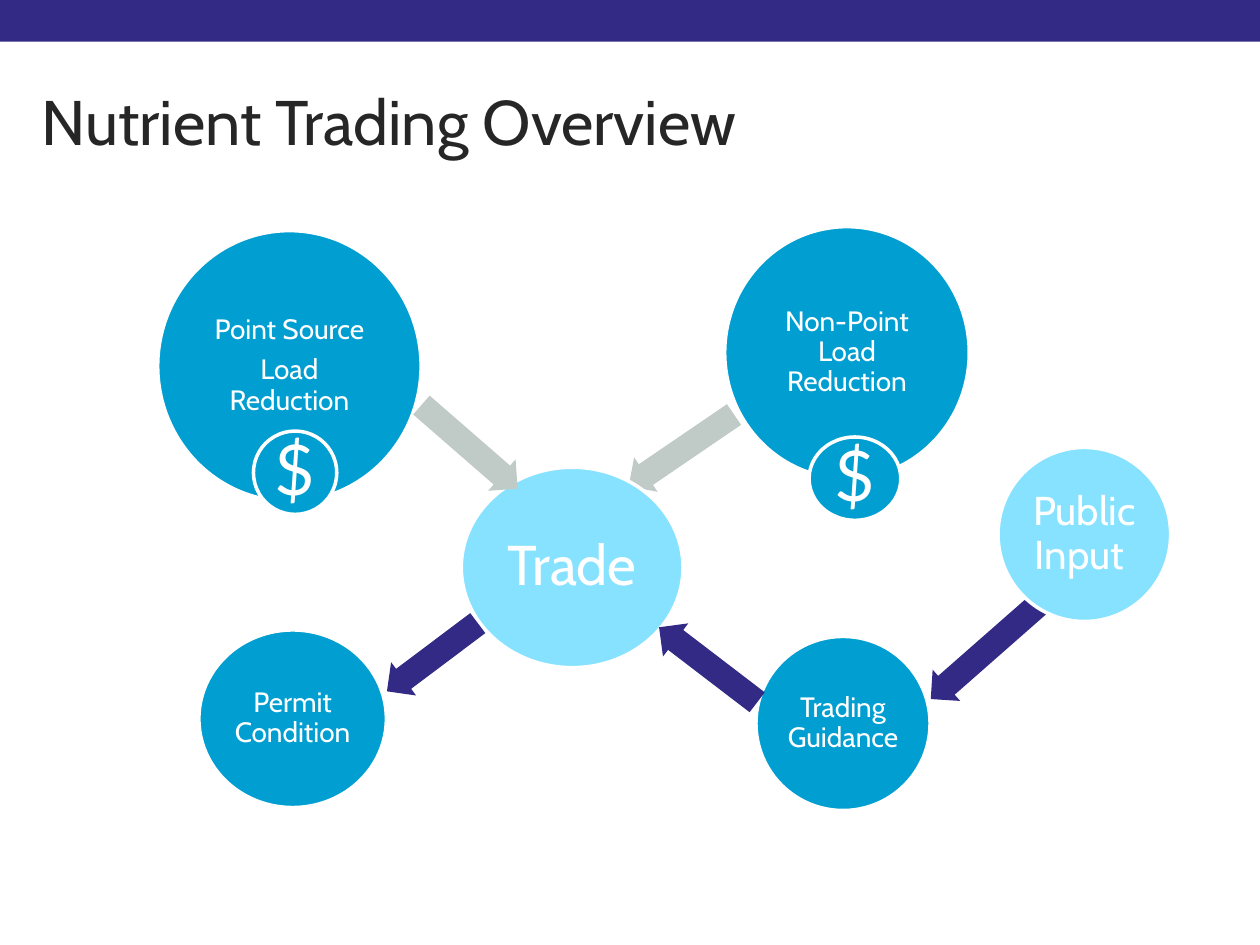
from pptx import Presentation
from pptx.dml.color import RGBColor
from pptx.enum import shapes, text
from pptx.util import Cm, Pt

INDIGO = RGBColor(0x33, 0x2A, 0x86)
BLUE = RGBColor(0x00, 0x9E, 0xD1)
SKY = RGBColor(0x87, 0xE2, 0xFF)
GREY = RGBColor(0xC0, 0xCA, 0xC7)
WHITE = RGBColor(0xFF, 0xFF, 0xFF)
CHARCOAL = RGBColor(0x26, 0x26, 0x26)

WIDTH = 25.4
BAND = 0.84  # height of the top bar and of every arrow


def add_filled(page, kind, left, top, width, height, color):
    shape = page.shapes.add_shape(kind, Cm(left), Cm(top), Cm(width), Cm(height))
    shape.shadow.inherit = False
    shape.fill.solid()
    shape.fill.fore_color.rgb = color
    shape.line.fill.background()
    return shape


def set_insets(frame, left, top, right, bottom):
    frame.margin_left, frame.margin_top = Cm(left), Cm(top)
    frame.margin_right, frame.margin_bottom = Cm(right), Cm(bottom)


def format_text(frame, size, font, color, align, spacing):
    frame.word_wrap = True
    frame.auto_size = text.MSO_AUTO_SIZE.NONE
    frame.vertical_anchor = text.MSO_ANCHOR.MIDDLE
    for para in frame.paragraphs:
        para.alignment = align
        para.line_spacing = spacing
        for span in para.runs:
            span.font.size = Pt(size)
            span.font.name = font
            span.font.color.rgb = color


def add_circle(page, words, left, top, width, height, color=BLUE, size=16, font="Cabin"):
    circle = add_filled(page, shapes.MSO_SHAPE.OVAL, left, top, width, height, color)
    circle.line.color.rgb = WHITE
    circle.line.width = Pt(2)
    frame = circle.text_frame
    frame.text = words
    set_insets(frame, *[size * 0.003] * 4)
    format_text(frame, size, font, WHITE, text.PP_ALIGN.CENTER, 0.9)
    for para in frame.paragraphs:
        para.space_after = Pt(size * 0.35)


def add_arrow(page, left, top, length, angle, color):
    arrow = add_filled(page, shapes.MSO_SHAPE.RIGHT_ARROW, left, top, length, BAND, color)
    arrow.adjustments[0] = 0.6
    arrow.adjustments[1] = 0.5
    arrow.rotation = angle


def add_title(page, words):
    title = page.shapes.title
    title.left, title.top, title.width, title.height = Cm(0.84), Cm(1.27), Cm(23.7), Cm(2.54)
    title.text_frame.text = words
    set_insets(title.text_frame, 0, 0.13, 0.25, 0.13)
    format_text(title.text_frame, 36, "Cabin", CHARCOAL, text.PP_ALIGN.LEFT, 0.85)


def main():
    deck = Presentation()
    deck.slide_width, deck.slide_height = Cm(WIDTH), Cm(19.05)
    page = deck.slides.add_slide(deck.slide_layouts[5])

    add_filled(page, shapes.MSO_SHAPE.RECTANGLE, 0, 0, WIDTH, BAND, INDIGO)
    add_title(page, "Nutrient Trading Overview")

    # Back to front: later arrows overlap the circles they leave or reach.
    add_circle(page, "Non-Point Load Reduction", 14.61, 4.57, 4.93, 5.08)
    add_arrow(page, 12.45, 8.66, 2.57, 145.7, GREY)
    add_circle(page, "Point Source\nLoad Reduction", 3.18, 4.65, 5.31, 5.46)
    add_circle(page, "Trade", 9.3, 9.42, 4.47, 4.04, SKY, 32)
    add_arrow(page, 18.34, 12.55, 3.4, 138.7, INDIGO)
    add_circle(page, "Trading Guidance", 15.24, 12.83, 3.51, 3.51)
    add_arrow(page, 13.03, 12.98, 2.49, 217.4, INDIGO)
    add_circle(page, "Permit Condition", 4.01, 12.7, 3.78, 3.58)
    add_arrow(page, 7.57, 12.83, 2.29, 143.1, INDIGO)
    add_circle(page, "$", 16.31, 8.81, 1.85, 1.68, size=40, font="Lato")
    add_circle(page, "$", 5.11, 8.69, 1.68, 1.68, size=40, font="Lato")
    add_arrow(page, 8.18, 8.59, 2.57, 41, GREY)
    add_circle(page, "Public Input ", 20.12, 9.02, 3.48, 3.51, SKY, 23)

    deck.save("out.pptx")


if __name__ == "__main__":
    main()
